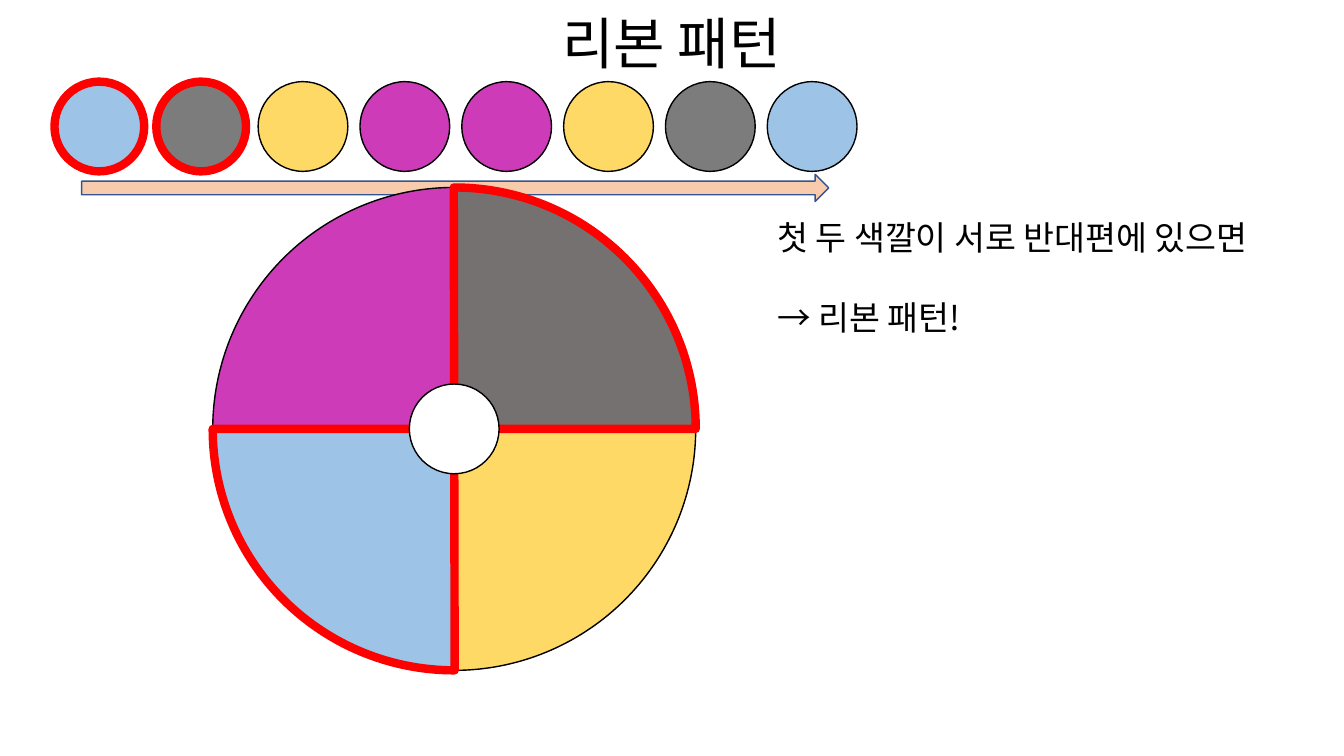
from pptx import Presentation, util as u
from pptx.dml.color import RGBColor
from pptx.enum import shapes, text
from pptx.oxml.ns import qn

BLACK = RGBColor(0x00, 0x00, 0x00)
WHITE = RGBColor(0xFF, 0xFF, 0xFF)
RED = RGBColor(0xFF, 0x00, 0x00)
BLUE = RGBColor(0x9D, 0xC3, 0xE6)
GRAY = RGBColor(0x7C, 0x7C, 0x7C)
WHEEL_GRAY = RGBColor(0x76, 0x71, 0x71)
YELLOW = RGBColor(0xFF, 0xD9, 0x66)
MAGENTA = RGBColor(0xCD, 0x3B, 0xB8)
PEACH = RGBColor(0xF8, 0xCB, 0xAD)
NAVY = RGBColor(0x32, 0x54, 0x91)

FONT = "Noto Sans CJK KR"
DOT = 0.89
DOT_LEFT, DOT_TOP, DOT_PITCH = 0.54, 0.81, 1.01
WHEEL = 4.79
WHEEL_LEFT, WHEEL_TOP = 2.11, 1.86


def add_filled(slide, kind, box, fill, line=BLACK, width=1):
    """Add a preset shape with a flat fill and an outline."""
    shape = slide.shapes.add_shape(kind, *map(u.Inches, box))
    shape.shadow.inherit = False
    shape.fill.solid()
    shape.fill.fore_color.rgb = fill
    shape.line.color.rgb = line
    shape.line.width = u.Pt(width)
    return shape


def add_dot(slide, left, top, fill, **outline):
    """Add one ribbon-sized circle."""
    add_filled(slide, shapes.MSO_SHAPE.OVAL, (left, top, DOT, DOT), fill, **outline)


def add_quarter(slide, rotation, fill, **outline):
    """Add a quarter of the wheel, turned from the upper left."""
    box = (WHEEL_LEFT, WHEEL_TOP, WHEEL, WHEEL)
    quarter = add_filled(slide, shapes.MSO_SHAPE.PIE, box, fill, **outline)
    quarter.adjustments[0] = 107.93
    quarter.adjustments[1] = 162
    quarter.rotation = rotation


def add_text(slide, box, lines, size, align=text.PP_ALIGN.LEFT, gap=0):
    """Add unwrapped text, one paragraph per line, with a gap between them."""
    frame = slide.shapes.add_textbox(*map(u.Inches, box)).text_frame
    frame.word_wrap = False
    frame.auto_size = text.MSO_AUTO_SIZE.SHAPE_TO_FIT_TEXT
    for index, line in enumerate(lines):
        paragraph = frame.add_paragraph() if index else frame.paragraphs[0]
        paragraph.alignment = align
        paragraph.space_before = u.Pt(gap if index else 0)
        run = paragraph.add_run()
        run.text = line
        run.font.size = u.Pt(size)
        run.font.name = FONT
        run.font.color.rgb = BLACK
        properties = run.font._element
        east_asian = properties.makeelement(qn("a:ea"), {"typeface": FONT})
        properties.find(qn("a:latin")).addnext(east_asian)


def main():
    """Build the ribbon pattern slide."""
    presentation = Presentation()
    presentation.slide_width = u.Inches(13.33)
    presentation.slide_height = u.Inches(7.5)
    slide = presentation.slides.add_slide(presentation.slide_layouts[6])
    highlight = {"line": RED, "width": 6}

    add_text(slide, (5.34, 0.04, 2.64, 0.77), ["리본 패턴"], 40, text.PP_ALIGN.CENTER)
    add_filled(slide, shapes.MSO_SHAPE.RIGHT_ARROW, (0.81, 1.73, 7.41, 0.27), PEACH, NAVY)

    add_quarter(slide, 0, MAGENTA)
    add_quarter(slide, 180, YELLOW)
    add_quarter(slide, 90, WHEEL_GRAY, **highlight)
    add_quarter(slide, 270, BLUE, **highlight)
    hub = (WHEEL - DOT) / 2
    add_dot(slide, WHEEL_LEFT + hub, WHEEL_TOP + hub, WHITE)

    half = [BLUE, GRAY, YELLOW, MAGENTA]
    for index, color in enumerate(half + half[::-1]):
        outline = highlight if index < 2 else {}
        add_dot(slide, DOT_LEFT + index * DOT_PITCH, DOT_TOP, color, **outline)

    lines = ["첫 두 색깔이 서로 반대편에 있으면", "→ 리본 패턴!"]
    add_text(slide, (7.61, 2.1, 5.51, 1.31), lines, 24, gap=28.8)

    presentation.save("out.pptx")


if __name__ == "__main__":
    main()
